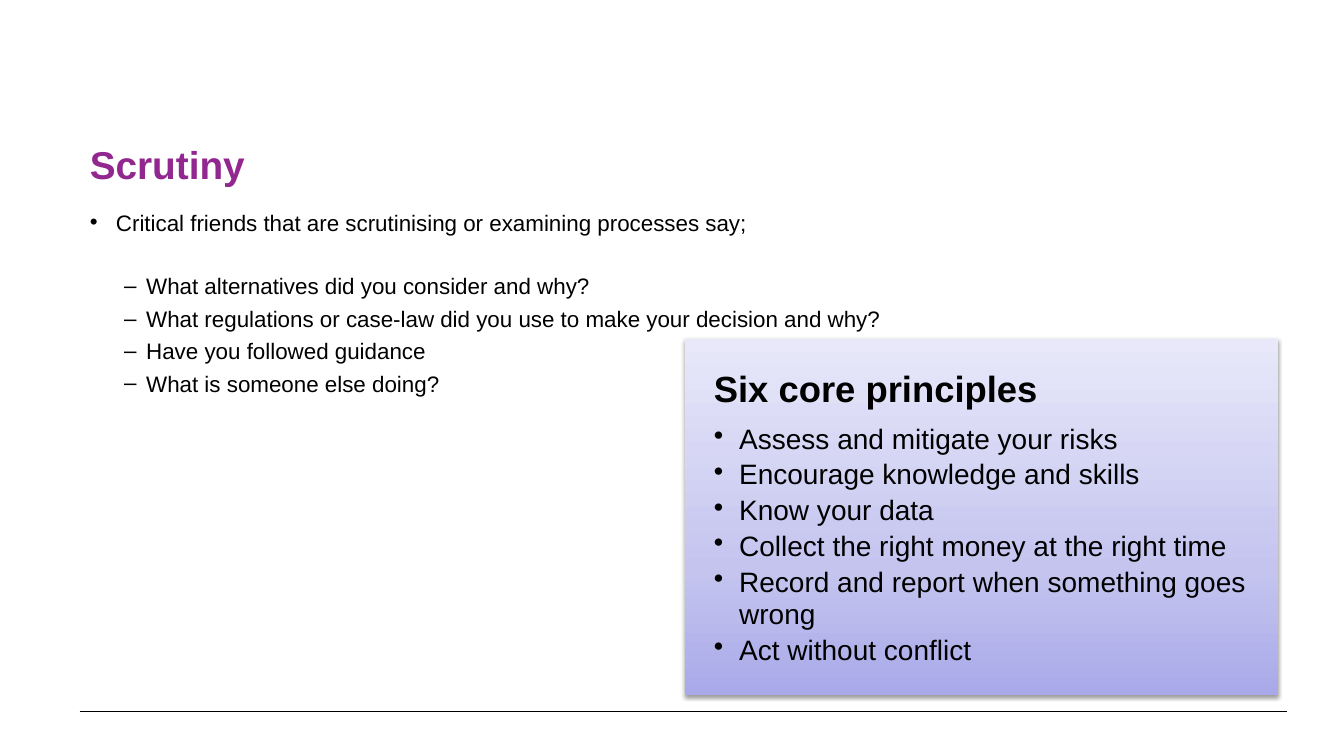
from copy import deepcopy
from dataclasses import dataclass

from lxml import etree
from pptx import Presentation
from pptx import oxml
from pptx.dml.color import RGBColor
from pptx.enum import shapes, text
from pptx.oxml.ns import nsdecls, qn
from pptx.util import Inches, Pt


@dataclass(frozen=True)
class Theme:
    font: str = "Arial"
    ink: str = "000000"
    head: str = "91278F"
    grad: tuple = ((0, "A9A9E9"), (0.35, "C4C4EF"), (1, "E8E8FA"))
    title: float = 27.7
    body: float = 16
    lead: float = 26
    item: float = 20


THEME = Theme()


def color(code):
    return RGBColor.from_string(code)


def place(shape, box):
    shape.left, shape.top, shape.width, shape.height = map(Inches, box)


def setup(frame, side=0.1, edge=0.05, anchor=text.MSO_ANCHOR.TOP):
    frame.word_wrap = True
    frame.auto_size = text.MSO_AUTO_SIZE.NONE
    frame.vertical_anchor = anchor
    frame.margin_left = frame.margin_right = Inches(side)
    frame.margin_top = frame.margin_bottom = Inches(edge)


def write(frame, words, size, tint=THEME.ink, bold=False, level=0,
          mark=None, left=0, hang=0, before=0, after=0, lines=1.0):
    """Add one paragraph, using the empty first one if it is free."""
    para = frame.paragraphs[0]
    if para.runs:
        para = frame.add_paragraph()
    para.level = level
    para.alignment = text.PP_ALIGN.LEFT
    para.space_before, para.space_after = Pt(before), Pt(after)
    para.line_spacing = lines
    props = para._p.get_or_add_pPr()
    props.set("marL", str(Inches(left)))
    props.set("indent", str(-Inches(hang)))
    if mark:
        etree.SubElement(props, qn("a:buChar")).set("char", mark)
    else:
        etree.SubElement(props, qn("a:buNone"))
    run = para.add_run()
    run.text = words
    font = run.font
    font.name, font.size, font.bold = THEME.font, Pt(size), bold
    font.color.rgb = color(tint)


def effects(shape, inner=""):
    shape._element.spPr.append(oxml.parse_xml(
        f"<a:effectLst {nsdecls('a')}>{inner}</a:effectLst>"))


# Title and questions
def heading(slide, box, words):
    title = slide.shapes.title
    place(title, box)
    setup(title.text_frame, anchor=text.MSO_ANCHOR.MIDDLE)
    write(title.text_frame, words, THEME.title, tint=THEME.head, bold=True)


def questions(slide, box, intro, asks):
    body = slide.placeholders[1]
    place(body, box)
    frame = body.text_frame
    setup(frame)
    write(frame, intro, THEME.body, mark="•", left=0.26, hang=0.26)
    for i, ask in enumerate(asks):
        write(frame, ask, THEME.body, level=1, mark="–", left=0.56,
              hang=0.22, before=4 if i else 26.4)


# Shaded panel
def panel(slide, box, lead, items):
    card = slide.shapes.add_shape(shapes.MSO_SHAPE.RECTANGLE,
                                  *map(Inches, box))
    card.line.fill.background()
    card.fill.gradient()
    card.fill.gradient_angle = 90
    first = card.fill.gradient_stops[0]._gs
    first.addnext(deepcopy(first))
    for stop, (pos, code) in zip(card.fill.gradient_stops, THEME.grad):
        stop.position = pos
        stop.color.rgb = color(code)
    effects(card, f'<a:outerShdw blurRad="{Pt(3.1)}" dist="{Pt(1.6)}" '
            'dir="5400000" rotWithShape="0"><a:srgbClr val="000000">'
            '<a:alpha val="38000"/></a:srgbClr></a:outerShdw>')
    frame = card.text_frame
    setup(frame, side=0.29, edge=0.3)
    write(frame, lead, THEME.lead, bold=True, after=9, lines=0.96)
    for item in items:
        write(frame, item, THEME.item, level=1, mark="•", left=0.25,
              hang=0.25, after=2.5, lines=0.96)


# Footer rule
def rule(slide, left, top, width):
    line = slide.shapes.add_connector(
        shapes.MSO_CONNECTOR.STRAIGHT,
        *map(Inches, (left, top, left + width, top)))
    line.line.color.rgb = color(THEME.ink)
    line.line.width = Pt(0.75)
    effects(line)


def main():
    deck = Presentation()
    deck.slide_width, deck.slide_height = Inches(13.33), Inches(7.5)
    slide = deck.slides.add_slide(deck.slide_layouts[1])
    left = 0.79
    rule(slide, left, 7.06, 11.97)
    heading(slide, (left, 1.31, 12, 0.63), "Scrutiny")
    questions(
        slide, (left, 2.02, 12, 4.68),
        "Critical friends that are scrutinising or examining processes say;",
        ("What alternatives did you consider and why?",
         "What regulations or case-law did you use to make your decision "
         "and why?",
         "Have you followed guidance",
         "What is someone else doing?"))
    panel(
        slide, (6.79, 3.36, 5.89, 3.54), "Six core principles",
        ("Assess and mitigate your risks",
         "Encourage knowledge and skills",
         "Know your data",
         "Collect the right money at the right time",
         "Record and report when something goes wrong",
         "Act without conflict"))
    deck.save("out.pptx")


if __name__ == "__main__":
    main()
